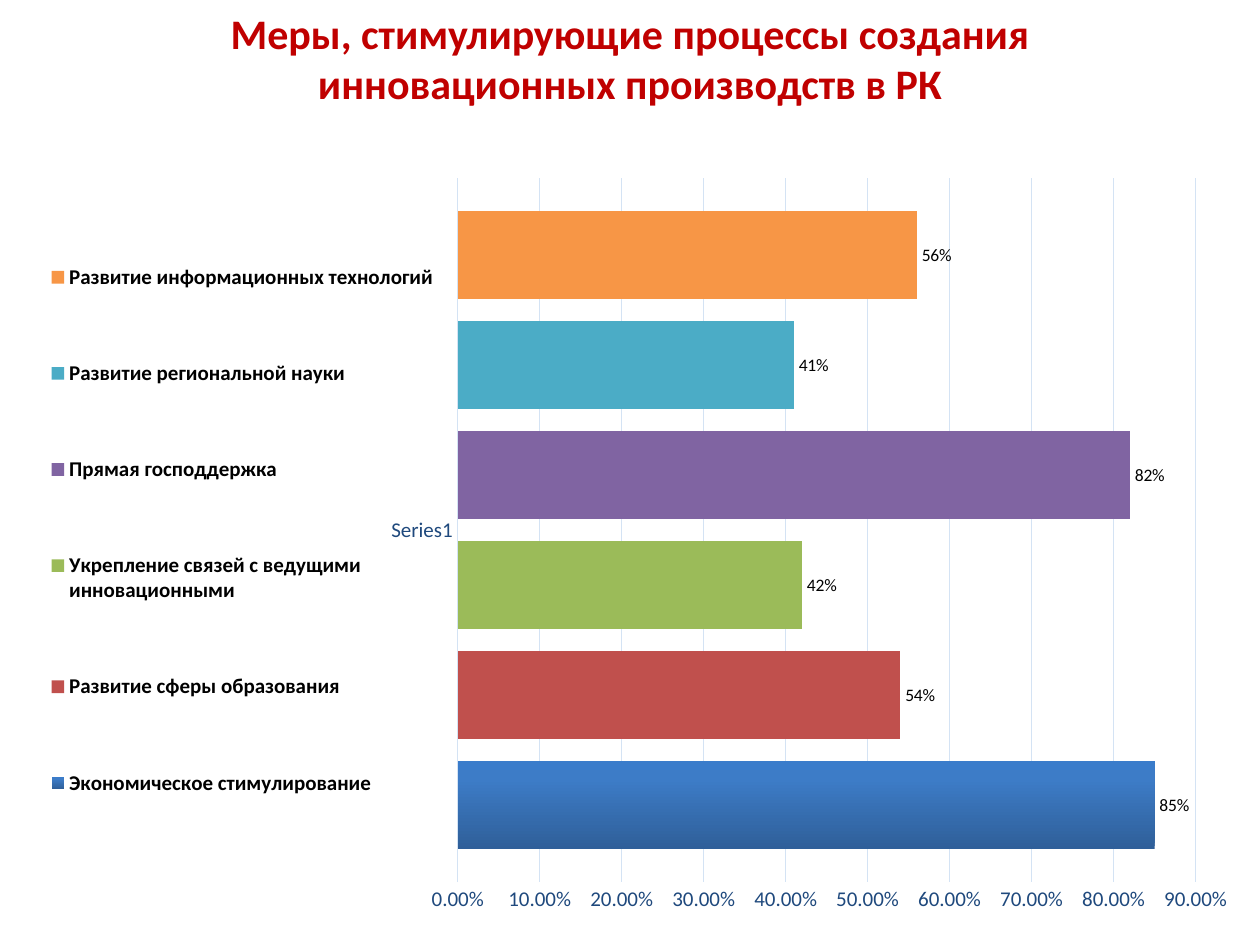
from copy import deepcopy
from typing import NamedTuple

from lxml.etree import SubElement
from pptx import Presentation
from pptx.chart.data import CategoryChartData as ChartData
from pptx.dml.color import RGBColor
from pptx.enum.chart import XL_CHART_TYPE as ChartType
from pptx.enum.chart import XL_LABEL_POSITION as LabelPosition
from pptx.enum.chart import XL_LEGEND_POSITION as LegendPosition
from pptx.enum.chart import XL_TICK_MARK as TickMark
from pptx.enum.text import MSO_ANCHOR as Anchor
from pptx.enum.text import PP_ALIGN as Align
from pptx.oxml.ns import qn
from pptx.util import Pt

FONT = "Calibri"
AXIS_TEXT = "1F497D"
AXIS_LINE = "D4E3F4"
BLUE_STOPS = [(0, "2F5F99"), (0.8, "3D7CC7"), (1, "3A7CCB")]


class Frame(NamedTuple):
    left: float
    top: float
    width: float
    height: float


class Measure(NamedTuple):
    name: str
    share: float
    color: str


MEASURES = [
    Measure("Экономическое стимулирование", 0.85, "3D7CC7"),
    Measure("Развитие сферы образования", 0.54, "C0504D"),
    Measure("Укрепление связей с ведущими инновационными", 0.42, "9BBB59"),
    Measure("Прямая господдержка", 0.82, "8064A2"),
    Measure("Развитие региональной науки", 0.41, "4BACC6"),
    Measure("Развитие информационных технологий", 0.56, "F79646"),
]


def rgb(color: str) -> RGBColor:
    return RGBColor.from_string(color)


def style_font(font, size: float, color: str, bold: bool = False) -> None:
    font.name, font.size, font.bold = FONT, Pt(size), bold
    font.color.rgb = rgb(color)


def add_text(page, text: str, frame: Frame, *, size: float, color: str,
             bold: bool = False, align=Align.CENTER, anchor=Anchor.MIDDLE) -> None:
    box = page.shapes.add_textbox(*map(Pt, frame))
    box.text_frame.word_wrap = True
    box.text_frame.vertical_anchor = anchor
    para = box.text_frame.paragraphs[0]
    para.alignment = align
    for index, line in enumerate(text.split("\n")):
        if index:
            para.add_line_break()
        span = para.add_run()
        span.text = line
        style_font(span.font, size, color, bold)


def style_line(line, color: str) -> None:
    line.color.rgb = rgb(color)
    line.width = Pt(0.75)


def set_layout(parent, before: str, frame: Frame, inner: bool = False) -> None:
    for old in parent.findall(qn("c:layout")):
        parent.remove(old)
    layout = parent.makeelement(qn("c:layout"))
    parent.find(qn(before)).addprevious(layout)
    manual = SubElement(layout, qn("c:manualLayout"))
    values = {"xMode": "edge", "yMode": "edge", **dict(zip("xywh", frame))}
    if inner:
        values = {"layoutTarget": "inner", **values}
    for tag, value in values.items():
        SubElement(manual, qn(f"c:{tag}")).set("val", str(value))


def fill_gradient(series, stops: list[tuple[float, str]]) -> None:
    fill = series.format.fill
    fill.gradient()
    fill.gradient_angle = 90
    stop_list = next(series._element.iter(qn("a:gsLst")))
    stop_list.append(deepcopy(stop_list[-1]))
    for stop, (position, color) in zip(fill.gradient_stops, stops):
        stop.position = position
        stop.color.rgb = rgb(color)


def style_axes(chart) -> None:
    for axis in (chart.category_axis, chart.value_axis):
        axis.major_tick_mark = axis.minor_tick_mark = TickMark.NONE
        style_font(axis.tick_labels.font, 12, AXIS_TEXT)
    style_line(chart.category_axis.format.line, AXIS_LINE)
    scale = chart.value_axis
    scale.minimum_scale, scale.maximum_scale, scale.major_unit = 0, 0.9, 0.1
    scale.tick_labels.number_format = "0.00%"
    scale.tick_labels.number_format_is_linked = False
    scale.format.line.fill.background()
    style_line(scale.major_gridlines.format.line, AXIS_LINE)


def style_legend(chart) -> None:
    chart.has_legend = True
    legend = chart.legend
    legend.position = LegendPosition.LEFT
    legend.include_in_layout = True
    style_font(legend.font, 12, "000000", bold=True)
    set_layout(legend._element, "c:overlay", Frame(0.02, 0.05, 0.33, 0.87))


def add_measure_chart(page, measures: list[Measure], frame: Frame) -> None:
    data = ChartData(number_format="0%")
    data.categories = ["Series1"]
    for measure in measures:
        data.add_series(measure.name, [measure.share])
    chart = page.shapes.add_chart(ChartType.BAR_CLUSTERED, *map(Pt, frame), data).chart
    chart.has_title = False
    style_font(chart.font, 10, "000000")
    plot = chart.plots[0]
    plot.gap_width, plot.overlap, plot.vary_by_categories = 75, -25, False
    plot.has_data_labels = True
    labels = plot.data_labels
    labels.show_value = True
    labels.position = LabelPosition.OUTSIDE_END
    labels.number_format, labels.number_format_is_linked = "0%", False
    style_font(labels.font, 10, "000000")
    for series, measure in zip(plot.series, measures):
        series.format.fill.solid()
        series.format.fill.fore_color.rgb = rgb(measure.color)
    fill_gradient(plot.series[0], BLUE_STOPS)
    style_axes(chart)
    style_legend(chart)
    plot_area = next(chart._chartSpace.iter(qn("c:plotArea")))
    set_layout(plot_area, "c:barChart", Frame(0.36, 0.03, 0.6, 0.91), inner=True)


def main() -> None:
    """Build the slide on measures that stimulate innovative production."""
    deck = Presentation()
    deck.slide_width, deck.slide_height = Pt(720), Pt(540)
    page = deck.slides.add_slide(deck.slide_layouts[6])
    add_text(page, "Меры, стимулирующие процессы создания\nинновационных производств в РК",
             Frame(0, 0, 720, 66), size=24, color="C00000", bold=True)
    add_measure_chart(page, MEASURES, Frame(8.64, 88.56, 702.72, 442.08))
    deck.save("out.pptx")


if __name__ == "__main__":
    main()
